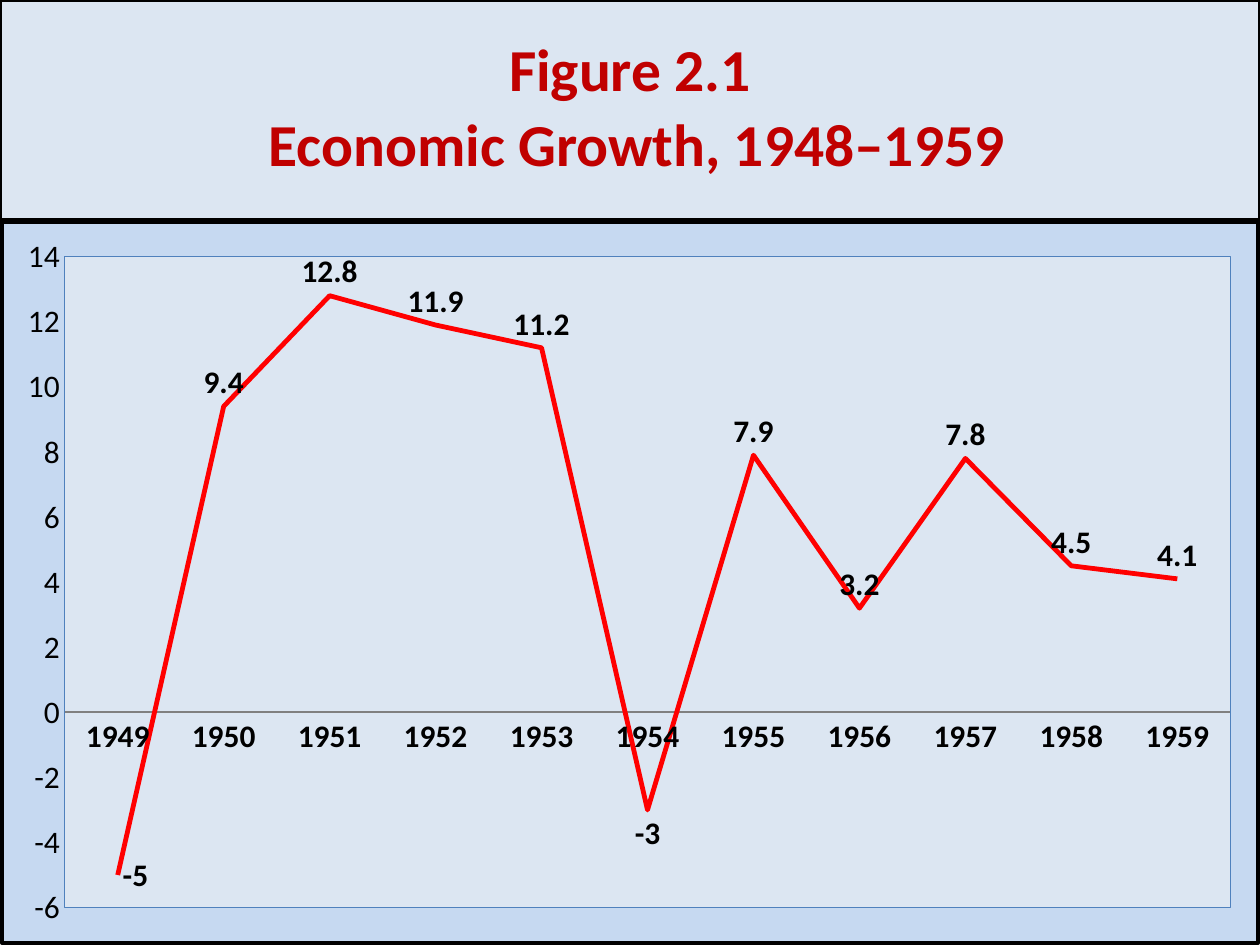
"""Build a slide with a line chart of economic growth by year."""
from dataclasses import dataclass, field

from lxml import etree
from pptx import Presentation
from pptx.chart.data import CategoryChartData
from pptx.dml.color import RGBColor
from pptx.enum.chart import XL_CHART_TYPE, XL_LABEL_POSITION, XL_MARKER_STYLE, XL_TICK_MARK
from pptx.enum.text import MSO_ANCHOR, MSO_AUTO_SIZE, PP_ALIGN
from pptx.oxml import parse_xml
from pptx.oxml.ns import nsdecls, qn
from pptx.util import Inches, Pt

LINE = XL_CHART_TYPE.LINE
ABOVE, BELOW, RIGHT = XL_LABEL_POSITION.ABOVE, XL_LABEL_POSITION.BELOW, XL_LABEL_POSITION.RIGHT
NO_MARKER = XL_MARKER_STYLE.NONE
NO_TICK = XL_TICK_MARK.NONE
CENTER = PP_ALIGN.CENTER
MIDDLE = MSO_ANCHOR.MIDDLE
NO_AUTOFIT = MSO_AUTO_SIZE.NONE

TITLE_ONLY = 5
TITLE_SHARE = 0.233
TITLE_LINES = ("Figure 2.1", " Economic Growth, 1948–1959")
GROWTH = {
    "1949": -5, "1950": 9.4, "1951": 12.8, "1952": 11.9, "1953": 11.2, "1954": -3,
    "1955": 7.9, "1956": 3.2, "1957": 7.8, "1958": 4.5, "1959": 4.1,
}
LABEL_EXCEPTIONS = {"1949": RIGHT, "1954": BELOW}
PLOT_SHARES = {"x": 0.05, "y": 0.048, "w": 0.928, "h": 0.903}
COLORS = {
    "panel": "DCE6F2", "frame": "C6D9F1", "title": "C00000", "series": "FF0000",
    "text": "000000", "axis": "808080", "plot_line": "4F81BD",
}


@dataclass
class SlideBuilder:
    """Hold the style and the current slide."""

    presentation: object
    font_name: str = "Calibri"
    title_size: float = 34
    chart_size: float = 18
    border: float = 2.25
    slide: object = field(init=False)

    def __post_init__(self):
        """Add the slide to the presentation."""
        layout = self.presentation.slide_layouts[TITLE_ONLY]
        self.slide = self.presentation.slides.add_slide(layout)

    def color(self, name):
        """Return a named colour."""
        return RGBColor.from_string(COLORS[name])

    def area(self, left, top, width, height):
        """Turn shares of the slide into lengths."""
        across, down = self.presentation.slide_width, self.presentation.slide_height
        return int(left * across), int(top * down), int(width * across), int(height * down)

    def style_font(self, font, size, color, bold=False):
        """Format a font."""
        font.name, font.size, font.bold = self.font_name, Pt(size), bold
        font.color.rgb = self.color(color)

    def style_line(self, line, color, width):
        """Format an outline."""
        line.color.rgb = self.color(color)
        line.width = Pt(width)

    def title(self, lines, shares):
        """Place the title and write its lines."""
        shape = self.slide.shapes.title
        shape.left, shape.top, shape.width, shape.height = self.area(*shares)
        shape.fill.solid()
        shape.fill.fore_color.rgb = self.color("panel")
        self.style_line(shape.line, "text", self.border)
        frame = shape.text_frame
        frame.auto_size, frame.vertical_anchor, frame.word_wrap = NO_AUTOFIT, MIDDLE, True
        for index, text in enumerate(lines):
            paragraph = frame.add_paragraph() if index else frame.paragraphs[0]
            paragraph.alignment = CENTER
            paragraph.line_spacing = 0.9
            paragraph.space_before, paragraph.space_after = Pt(0), Pt(6)
            run = paragraph.add_run()
            run.text = text
            self.style_font(run.font, self.title_size, "title", True)

    def line_chart(self, values, label_exceptions, shares):
        """Add a line chart with labelled points."""
        data = CategoryChartData()
        data.categories = list(values)
        data.add_series("Series 1", list(values.values()))
        chart = self.slide.shapes.add_chart(LINE, *self.area(*shares), data).chart
        chart.has_legend = chart.has_title = False
        self.style_font(chart.font, self.chart_size, "text")
        self.axes(chart)
        plot = chart.plots[0]
        plot.vary_by_categories = False
        self.series(plot.series[0], list(values), label_exceptions)
        self.chart_areas(chart)

    def axes(self, chart):
        """Format both axes."""
        for axis, bold in ((chart.category_axis, True), (chart.value_axis, False)):
            axis.has_major_gridlines = False
            axis.major_tick_mark = axis.minor_tick_mark = NO_TICK
            self.style_font(axis.tick_labels.font, self.chart_size, "text", bold)
        self.style_line(chart.category_axis.format.line, "axis", 1)
        value_axis = chart.value_axis
        value_axis.minimum_scale, value_axis.maximum_scale, value_axis.major_unit = -6, 14, 2
        value_axis.format.line.fill.background()

    def series(self, series, categories, label_exceptions):
        """Format the line and its labels."""
        series.smooth = False
        series.marker.style = NO_MARKER
        self.style_line(series.format.line, "series", 2.75)
        labels = series.data_labels
        labels.show_value, labels.position = True, ABOVE
        self.style_font(labels.font, self.chart_size, "text", True)
        for category, position in label_exceptions.items():
            label = series.points[categories.index(category)].data_label
            self.style_font(label.font, self.chart_size, "text", True)
            label.position = position

    def area_format(self, fill, line, width):
        """Return the fill and outline of a chart area."""
        return parse_xml(
            f'<c:spPr {nsdecls("c", "a")}>'
            f'<a:solidFill><a:srgbClr val="{COLORS[fill]}"/></a:solidFill>'
            f'<a:ln w="{Pt(width)}"><a:solidFill><a:srgbClr val="{COLORS[line]}"/>'
            '</a:solidFill></a:ln></c:spPr>'
        )

    def chart_areas(self, chart):
        """Format the chart area and fix the inner plot area."""
        space = chart.element
        space.find(qn("c:chart")).addnext(self.area_format("frame", "text", self.border))
        plot_area = space.find(".//" + qn("c:plotArea"))
        plot_area.append(self.area_format("panel", "plot_line", 0.75))
        layout = plot_area.find(qn("c:layout"))
        if layout is None:
            layout = parse_xml(f'<c:layout {nsdecls("c")}/>')
            plot_area.insert(0, layout)
        manual = etree.SubElement(layout, qn("c:manualLayout"))
        settings = {"layoutTarget": "inner", "xMode": "edge", "yMode": "edge", **PLOT_SHARES}
        for name, value in settings.items():
            etree.SubElement(manual, qn(f"c:{name}")).set("val", str(value))


def main():
    """Build and save the presentation."""
    presentation = Presentation()
    presentation.slide_width, presentation.slide_height = Inches(10), Inches(7.5)
    builder = SlideBuilder(presentation)
    builder.title(TITLE_LINES, (0, 0, 1, TITLE_SHARE))
    builder.line_chart(GROWTH, LABEL_EXCEPTIONS, (0, TITLE_SHARE, 1, 1 - TITLE_SHARE))
    presentation.save("out.pptx")


if __name__ == "__main__":
    main()
